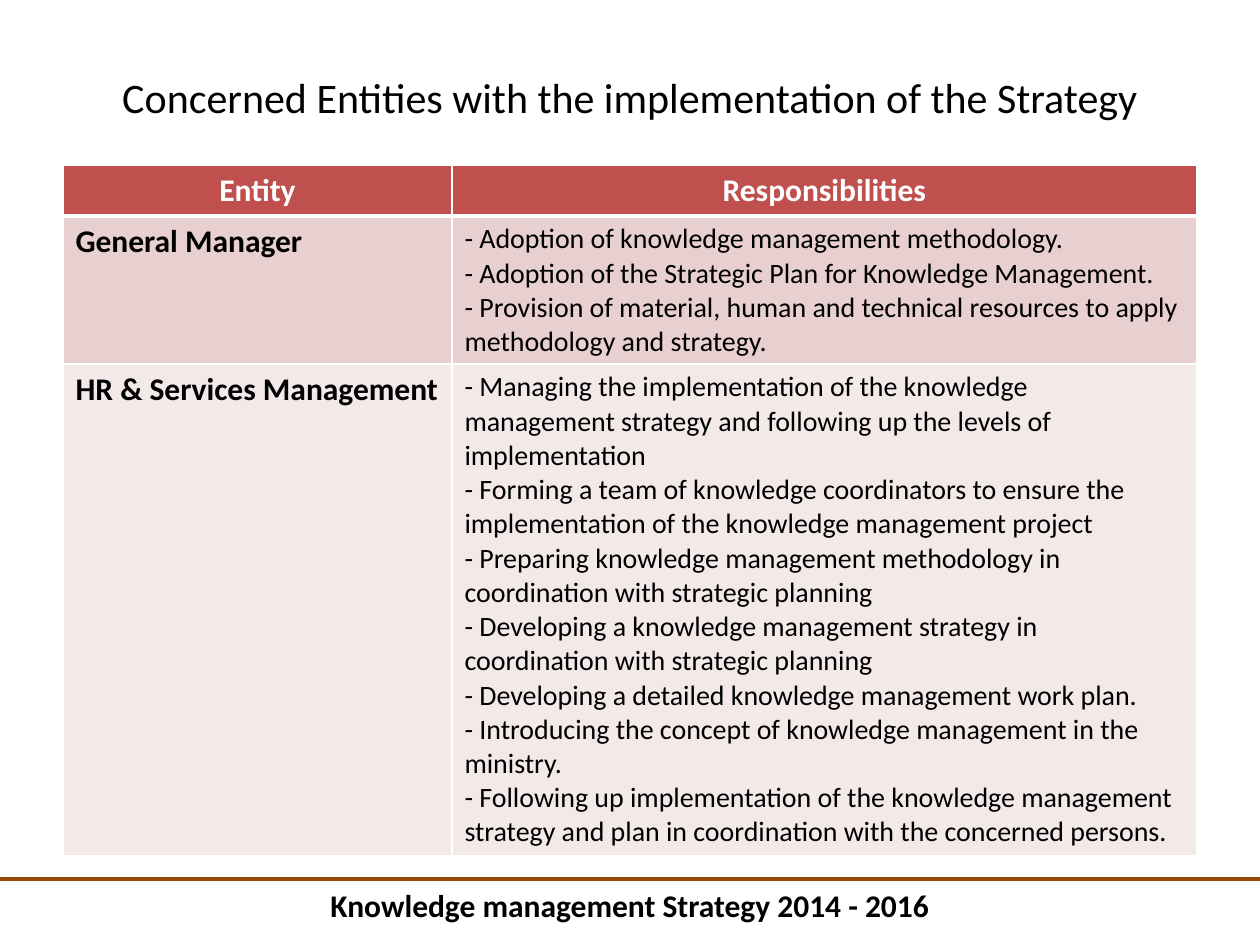
import dataclasses

import lxml.etree
import pptx
import pptx.dml.color
import pptx.enum.shapes
import pptx.enum.text
import pptx.oxml.ns
import pptx.util

EMU_PER_PX = 914400 / 126
ALIGN = pptx.enum.text.PP_ALIGN
ANCHOR = pptx.enum.text.MSO_ANCHOR


@dataclasses.dataclass(frozen=True)
class Theme:
    font: str = "Calibri"
    ink: str = "000000"
    paper: str = "FFFFFF"
    header: str = "C0504D"
    bands: tuple = ("E8D0D0", "F4E9E9")
    rule: str = "984807"
    title_size: int = 24
    label_size: int = 18
    body_size: int = 16
    rule_width: float = 2.25
    border_width: int = 1
    header_border_width: int = 3


THEME = Theme()

HEADERS = ("Entity", "Responsibilities")
COLUMN_WIDTHS = (389, 745)
ROW_HEIGHTS = (51, 148, 492)
ENTITIES = (
    ("General Manager", (
        "- Adoption of knowledge management methodology.",
        "- Adoption of the Strategic Plan for Knowledge Management.",
        "- Provision of material, human and technical resources to apply methodology and strategy.",
    )),
    ("HR & Services Management", (
        "- Managing the implementation of the knowledge management strategy and following up the levels of implementation",
        "- Forming a team of knowledge coordinators to ensure the implementation of the knowledge management project",
        "- Preparing knowledge management methodology in coordination with strategic planning",
        "- Developing a knowledge management strategy in coordination with strategic planning",
        "- Developing a detailed knowledge management work plan.",
        "- Introducing the concept of knowledge management in the ministry.",
        "- Following up implementation of the knowledge management strategy and plan in coordination with the concerned persons.",
    )),
)


def px(length):
    return pptx.util.Emu(round(length * EMU_PER_PX))


def rgb(color):
    return pptx.dml.color.RGBColor.from_string(color)


def write_text(frame, lines, size=THEME.label_size, color=THEME.ink, bold=False, align=ALIGN.LEFT):
    for index, line in enumerate(lines):
        para = frame.paragraphs[0] if index == 0 else frame.add_paragraph()
        para.alignment = align
        span = para.add_run()
        span.text = line
        span.font.name = THEME.font
        span.font.size = pptx.util.Pt(size)
        span.font.bold = bold
        span.font.color.rgb = rgb(color)


def set_title(page, text):
    title = page.shapes.title
    title.left, title.top, title.width, title.height = px(63), px(38), px(1134), px(117)
    title.text_frame.vertical_anchor = ANCHOR.MIDDLE
    write_text(title.text_frame, [text], size=THEME.title_size, align=ALIGN.CENTER)


def add_footer(page, text):
    rule = page.shapes.add_connector(
        pptx.enum.shapes.MSO_CONNECTOR.STRAIGHT, px(0), px(879), px(1260), px(879))
    rule.line.color.rgb = rgb(THEME.rule)
    rule.line.width = pptx.util.Pt(THEME.rule_width)
    lxml.etree.SubElement(rule._element.spPr, pptx.oxml.ns.qn("a:effectLst"))
    box = page.shapes.add_textbox(px(315), px(880), px(630), px(51))
    box.text_frame.word_wrap = False
    write_text(box.text_frame, [text], bold=True, align=ALIGN.CENTER)


def set_borders(cell, bottom=THEME.border_width, top=THEME.border_width):
    properties = cell._tc.get_or_add_tcPr()
    side = THEME.border_width
    for tag, width in (("lnL", side), ("lnR", side), ("lnT", top), ("lnB", bottom)):
        line = lxml.etree.SubElement(
            properties, pptx.oxml.ns.qn(f"a:{tag}"), w=str(pptx.util.Pt(width)))
        fill = lxml.etree.SubElement(line, pptx.oxml.ns.qn("a:solidFill"))
        lxml.etree.SubElement(fill, pptx.oxml.ns.qn("a:srgbClr"), val=THEME.paper)


def fill_cell(cell, lines, fill, borders=None, **text_format):
    set_borders(cell, **(borders or {}))
    cell.fill.solid()
    cell.fill.fore_color.rgb = rgb(fill)
    write_text(cell.text_frame, lines, **text_format)


def add_entity_table(page):
    frame = page.shapes.add_table(
        len(ROW_HEIGHTS), len(COLUMN_WIDTHS), px(63), px(165),
        px(sum(COLUMN_WIDTHS)), px(sum(ROW_HEIGHTS)))
    table = frame.table
    for column, width in zip(table.columns, COLUMN_WIDTHS):
        column.width = px(width)
    for row, height in zip(table.rows, ROW_HEIGHTS):
        row.height = px(height)
    for index, header in enumerate(HEADERS):
        fill_cell(table.cell(0, index), [header], THEME.header,
                  borders={"bottom": THEME.header_border_width},
                  color=THEME.paper, bold=True, align=ALIGN.CENTER)
    for index, (entity, duties) in enumerate(ENTITIES):
        fill = THEME.bands[index % len(THEME.bands)]
        borders = {"top": THEME.header_border_width} if index == 0 else None
        fill_cell(table.cell(index + 1, 0), [entity], fill, borders, bold=True)
        fill_cell(table.cell(index + 1, 1), duties, fill, borders, size=THEME.body_size)


def main():
    deck = pptx.Presentation()
    deck.slide_width, deck.slide_height = px(1260), px(945)
    page = deck.slides.add_slide(deck.slide_layouts.get_by_name("Title Only"))
    add_footer(page, "Knowledge management Strategy 2014 - 2016")
    set_title(page, "Concerned Entities with the implementation of the Strategy")
    add_entity_table(page)
    deck.save("out.pptx")


if __name__ == "__main__":
    main()
